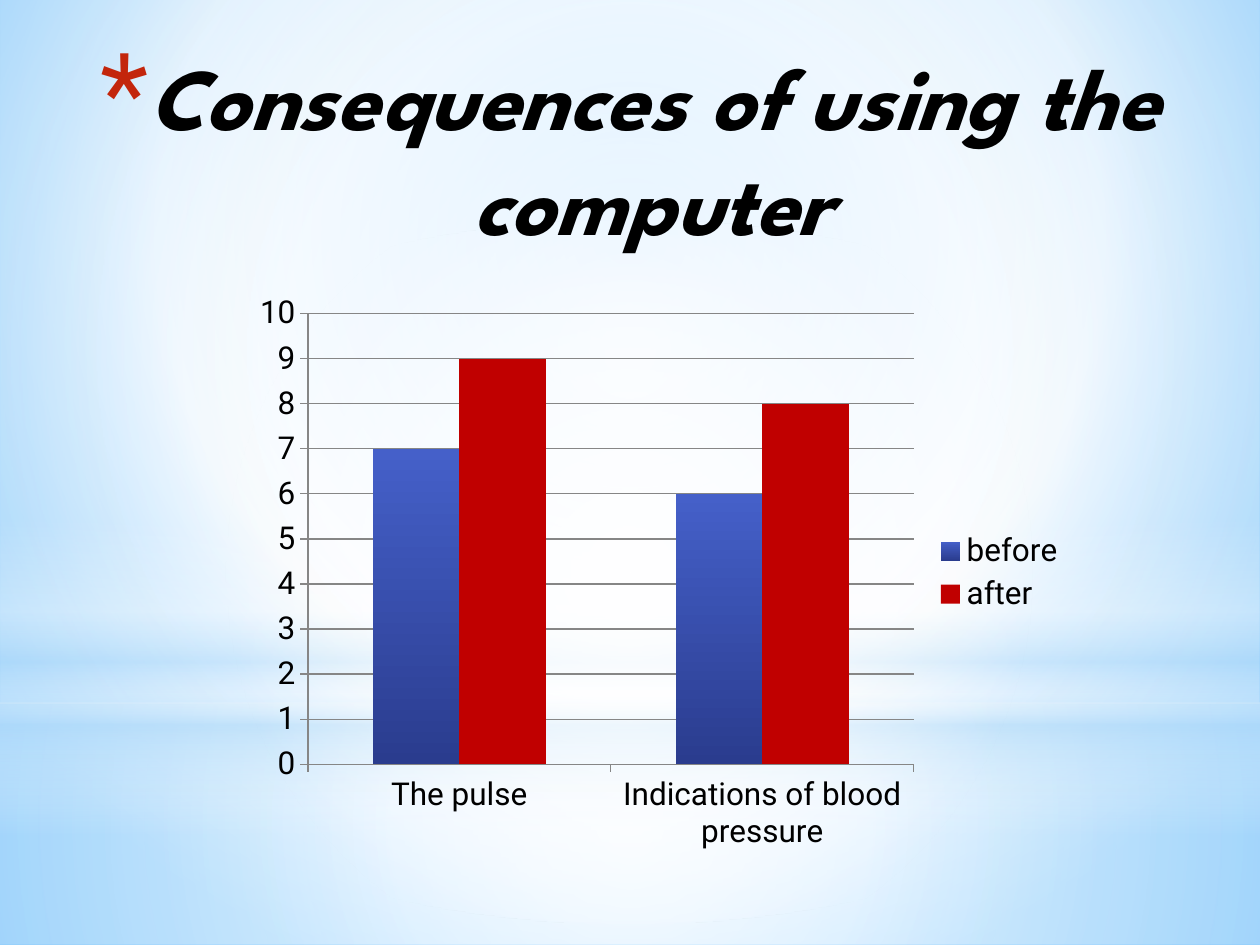
import dataclasses
import typing

import lxml.etree
import pptx
import pptx.chart.data
import pptx.dml.color
import pptx.enum.chart
import pptx.enum.shapes
import pptx.enum.text
import pptx.oxml
import pptx.oxml.ns
import pptx.util

WIDTH, HEIGHT = pptx.util.Inches(10), pptx.util.Inches(7.5)
COLORS = {
    "white": "FFFFFF",
    "pale": "B4DCFA",
    "sky": "9ED5FF",
    "azure": "5BB9FF",
    "black": "000000",
    "bullet": "C3260C",
    "before_top": "4560C9",
    "before_bottom": "2A3C8E",
    "after": "C00000",
    "grid": "868686",
}
TITLE_FONT, CHART_FONT = "League Spartan", "Roboto"
CENTER = (50, 50, 50, 50)


class Stop(typing.NamedTuple):
    position: int
    color: str
    opacity: int = 100


@dataclasses.dataclass
class Glow:
    shape_type: pptx.enum.shapes.MSO_SHAPE
    top: float
    height: float
    stops: list[Stop]
    focus: typing.Optional[tuple[int, int, int, int]] = CENTER


RECTANGLE = pptx.enum.shapes.MSO_SHAPE.RECTANGLE
OVAL = pptx.enum.shapes.MSO_SHAPE.OVAL
BACKGROUND = [Stop(0, "sky"), Stop(60, "white"), Stop(100, "azure")]
GLOWS = [
    Glow(RECTANGLE, 0.744, 0.256,
         [Stop(0, "white", 91), Stop(37, "white", 76), Stop(100, "pale", 79)]),
    Glow(RECTANGLE, 0, 0.744,
         [Stop(0, "white", 89), Stop(48, "white", 62), Stop(100, "pale", 79)]),
    Glow(RECTANGLE, 0.55, 0.333,
         [Stop(0, "white", 0), Stop(29, "white", 30), Stop(45, "pale", 40),
          Stop(55, "white", 26), Stop(65, "pale", 60), Stop(100, "white", 0)], None),
    Glow(OVAL, 0.233, 0.744, [Stop(0, "white"), Stop(56, "white", 0)]),
]


def rgb(name: str) -> pptx.dml.color.RGBColor:
    return pptx.dml.color.RGBColor.from_string(COLORS[name])


def add_element(parent, tag: str, **attributes):
    return lxml.etree.SubElement(
        parent, pptx.oxml.ns.qn(tag), {key: str(value) for key, value in attributes.items()})


def apply_gradient(fill, properties, stops: list[Stop], focus) -> None:
    fill.solid()
    solid = properties.find(pptx.oxml.ns.qn("a:solidFill"))
    gradient = pptx.oxml.parse_xml(f'<a:gradFill {pptx.oxml.ns.nsdecls("a")} rotWithShape="1"/>')
    stop_list = add_element(gradient, "a:gsLst")
    for stop in stops:
        entry = add_element(stop_list, "a:gs", pos=stop.position * 1000)
        color = add_element(entry, "a:srgbClr", val=COLORS[stop.color])
        if stop.opacity < 100:
            add_element(color, "a:alpha", val=stop.opacity * 1000)
    if focus:
        circle = add_element(gradient, "a:path", path="circle")
        edges = {side: share * 1000 for side, share in zip("ltrb", focus)}
        add_element(circle, "a:fillToRect", **edges)
    else:
        add_element(gradient, "a:lin", ang=90 * 60000, scaled=1)
    properties.replace(solid, gradient)


def draw_background(slide) -> None:
    fill = slide.background.fill
    fill.solid()
    properties = slide.element.find(".//" + pptx.oxml.ns.qn("p:bgPr"))
    apply_gradient(fill, properties, BACKGROUND, (20, 10, 20, 60))


def draw_glow(slide, glow: Glow) -> None:
    shape = slide.shapes.add_shape(
        glow.shape_type, 0, round(HEIGHT * glow.top), WIDTH, round(HEIGHT * glow.height))
    shape.shadow.inherit = False
    shape.line.fill.background()
    apply_gradient(shape.fill, shape.element.spPr, glow.stops, glow.focus)


def draw_title(slide, text: str) -> None:
    title = slide.shapes.title
    title.left, title.top = round(WIDTH * 0.059), round(HEIGHT * 0.039)
    title.width, title.height = round(WIDTH * 0.883), round(HEIGHT * 0.16)
    frame = title.text_frame
    frame.text = text
    frame.word_wrap = True
    frame.auto_size = pptx.enum.text.MSO_AUTO_SIZE.NONE
    frame.vertical_anchor = pptx.enum.text.MSO_ANCHOR.TOP
    paragraph = frame.paragraphs[0]
    paragraph.alignment = pptx.enum.text.PP_ALIGN.CENTER
    paragraph.line_spacing = 1.0
    font = paragraph.runs[0].font
    font.name, font.size = TITLE_FONT, pptx.util.Pt(50)
    font.bold = font.italic = True
    font.color.rgb = rgb("black")
    properties = paragraph._p.get_or_add_pPr()
    indent = pptx.util.Inches(0.35)
    properties.set("marL", str(indent))
    properties.set("indent", str(-indent))
    add_element(add_element(properties, "a:buClr"), "a:srgbClr", val=COLORS["bullet"])
    add_element(properties, "a:buSzPct", val=128000)
    add_element(properties, "a:buFont", typeface=CHART_FONT)
    add_element(properties, "a:buChar", char="*")


def draw_chart(slide) -> None:
    data = pptx.chart.data.CategoryChartData()
    data.categories = ["The pulse", "Indications of blood pressure"]
    data.add_series("before ", (7, 6))
    data.add_series("after", (9, 8))
    chart = slide.shapes.add_chart(
        pptx.enum.chart.XL_CHART_TYPE.COLUMN_CLUSTERED,
        round(WIDTH * 0.193), round(HEIGHT * 0.3),
        round(WIDTH * 0.669), round(HEIGHT * 0.612), data).chart
    chart.has_title = False
    chart.font.name, chart.font.size = CHART_FONT, pptx.util.Pt(18)
    chart.font.color.rgb = rgb("black")
    chart.has_legend = True
    chart.legend.position = pptx.enum.chart.XL_LEGEND_POSITION.RIGHT
    chart.legend.include_in_layout = False
    plot = chart.plots[0]
    plot.gap_width, plot.overlap, plot.vary_by_categories = 150, 0, False
    before, after = plot.series
    before.format.fill.gradient()
    before.format.fill.gradient_angle = 270
    for stop, name in zip(before.format.fill.gradient_stops, ("before_top", "before_bottom")):
        stop.color.rgb = rgb(name)
    after.format.fill.solid()
    after.format.fill.fore_color.rgb = rgb("after")
    values = chart.value_axis
    values.minimum_scale, values.maximum_scale, values.major_unit = 0, 10, 1
    values.has_major_gridlines = True
    for axis in (chart.category_axis, values):
        axis.major_tick_mark = pptx.enum.chart.XL_TICK_MARK.OUTSIDE
        axis.minor_tick_mark = pptx.enum.chart.XL_TICK_MARK.NONE
    for lines in (chart.category_axis, values, values.major_gridlines):
        lines.format.line.color.rgb = rgb("grid")
        lines.format.line.width = pptx.util.Pt(0.75)


def main() -> None:
    presentation = pptx.Presentation()
    presentation.slide_width, presentation.slide_height = WIDTH, HEIGHT
    slide = presentation.slides.add_slide(presentation.slide_layouts[5])
    draw_background(slide)
    for glow in GLOWS:
        draw_glow(slide, glow)
    title = slide.shapes.title.element
    title.getparent().append(title)
    draw_title(slide, "Consequences of using the computer")
    draw_chart(slide)
    presentation.save("out.pptx")


if __name__ == "__main__":
    main()
